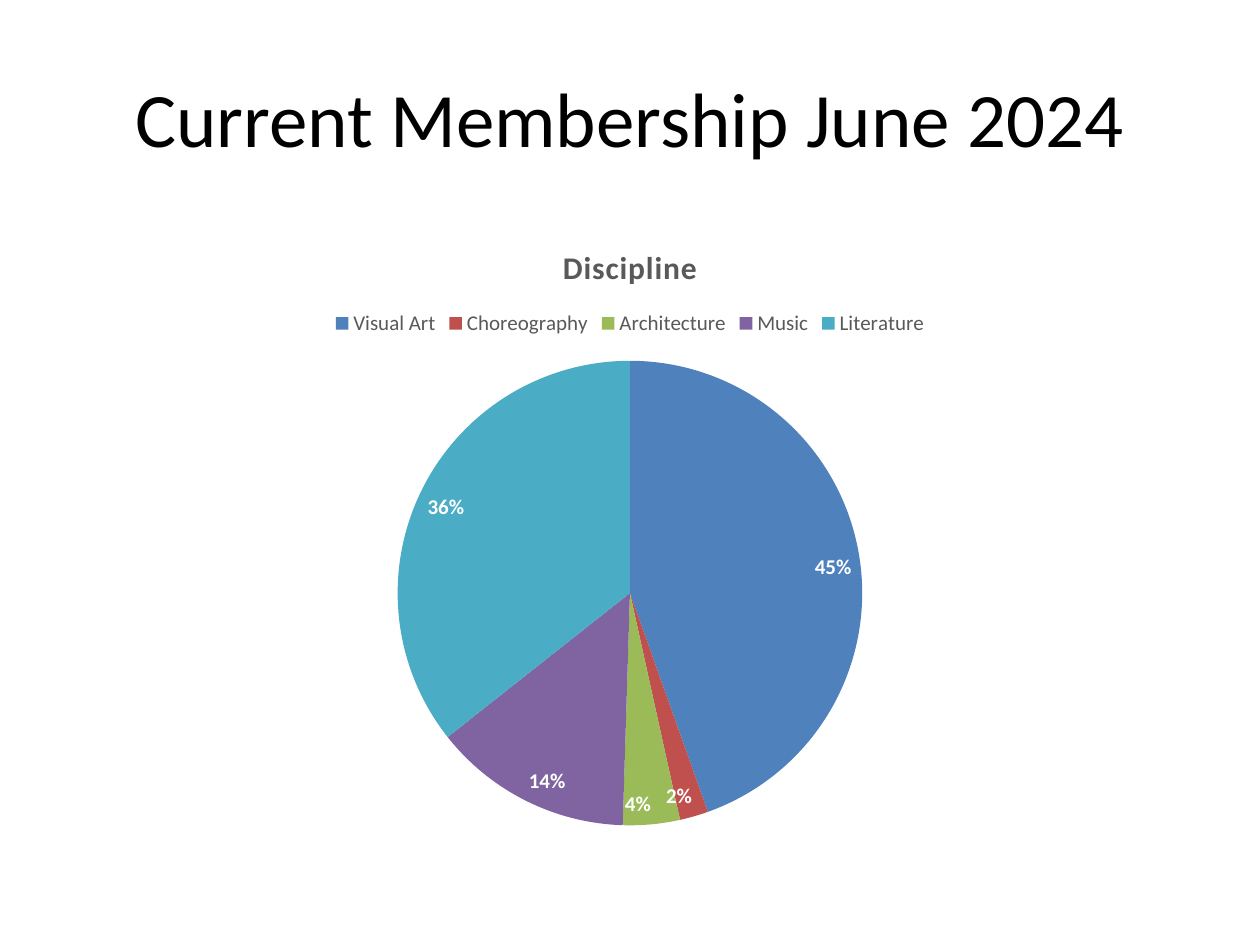
from lxml import etree
from pptx import Presentation
from pptx.chart.data import CategoryChartData
from pptx.dml.color import RGBColor
from pptx.enum.chart import XL_CHART_TYPE, XL_LABEL_POSITION, XL_LEGEND_POSITION
from pptx.enum.text import MSO_ANCHOR, PP_ALIGN
from pptx.util import Inches, Pt

PIE = XL_CHART_TYPE.PIE
INSIDE_END = XL_LABEL_POSITION.INSIDE_END
LEGEND_TOP = XL_LEGEND_POSITION.TOP
MIDDLE = MSO_ANCHOR.MIDDLE
CENTER = PP_ALIGN.CENTER

DISCIPLINES = [
    ("Visual Art", 45, "4F81BD"),
    ("Choreography", 2, "C0504D"),
    ("Architecture", 4, "9BBB59"),
    ("Music", 14, "8064A2"),
    ("Literature", 36, "4BACC6"),
]


def set_font(font, size, color, bold=False):
    font.name = "Calibri"
    font.size = Pt(size)
    font.bold = bold
    font.color.rgb = RGBColor.from_string(color)


def write(tf, text, size, color, bold=False):
    p = tf.paragraphs[0]
    p.alignment = CENTER
    r = p.add_run()
    r.text = text
    set_font(r.font, size, color, bold)
    return r


prs = Presentation()
prs.slide_width, prs.slide_height = Inches(10), Inches(7.5)
s = prs.slides.add_slide(prs.slide_layouts[5])

# Slide title
title = s.shapes.title
title.left, title.top = Inches(0.5), Inches(0.3)
title.width, title.height = Inches(9), Inches(1.25)
title.text_frame.vertical_anchor = MIDDLE
write(title.text_frame, "Current Membership June 2024", 44, "000000")

# Pie chart
data = CategoryChartData()
data.categories = [name for name, _, _ in DISCIPLINES]
data.add_series("Series 1", [value for _, value, _ in DISCIPLINES])
chart = s.shapes.add_chart(
    PIE, Inches(0.5), Inches(1.75), Inches(9), Inches(4.95), data).chart
set_font(chart.font, 10, "000000")

# Chart title and legend
chart.has_title = True
r = write(chart.chart_title.text_frame, "Discipline", 18, "595959", bold=True)
r.font._element.set("spc", "50")
chart.chart_title.include_in_layout = False
chart.has_legend = True
chart.legend.position = LEGEND_TOP
chart.legend.include_in_layout = False
set_font(chart.legend.font, 12, "595959")

# Slice colours and percentage labels
plot = chart.plots[0]
plot.vary_by_categories = True
for i, (_, _, color) in enumerate(DISCIPLINES):
    fill = plot.series[0].points[i].format.fill
    fill.solid()
    fill.fore_color.rgb = RGBColor.from_string(color)
plot.has_data_labels = True
labels = plot.data_labels
labels.show_percentage = True
labels.show_value = False
labels.number_format = "0%"
labels.number_format_is_linked = False
labels.position = INSIDE_END
set_font(labels.font, 12, "FFFFFF", bold=True)

# Pie position as fractions of the chart area
plot_area = chart._chartSpace.chart.plotArea
C = "{http://schemas.openxmlformats.org/drawingml/2006/chart}"
for old in plot_area.findall(C + "layout"):
    plot_area.remove(old)
layout = etree.Element(C + "layout")
manual = etree.SubElement(layout, C + "manualLayout")
for tag, val in [("layoutTarget", "inner"), ("xMode", "edge"), ("yMode", "edge"),
                 ("x", "0.295"), ("y", "0.225"), ("w", "0.41"), ("h", "0.745")]:
    etree.SubElement(manual, C + tag).set("val", val)
plot_area.insert(0, layout)

prs.save("out.pptx")
